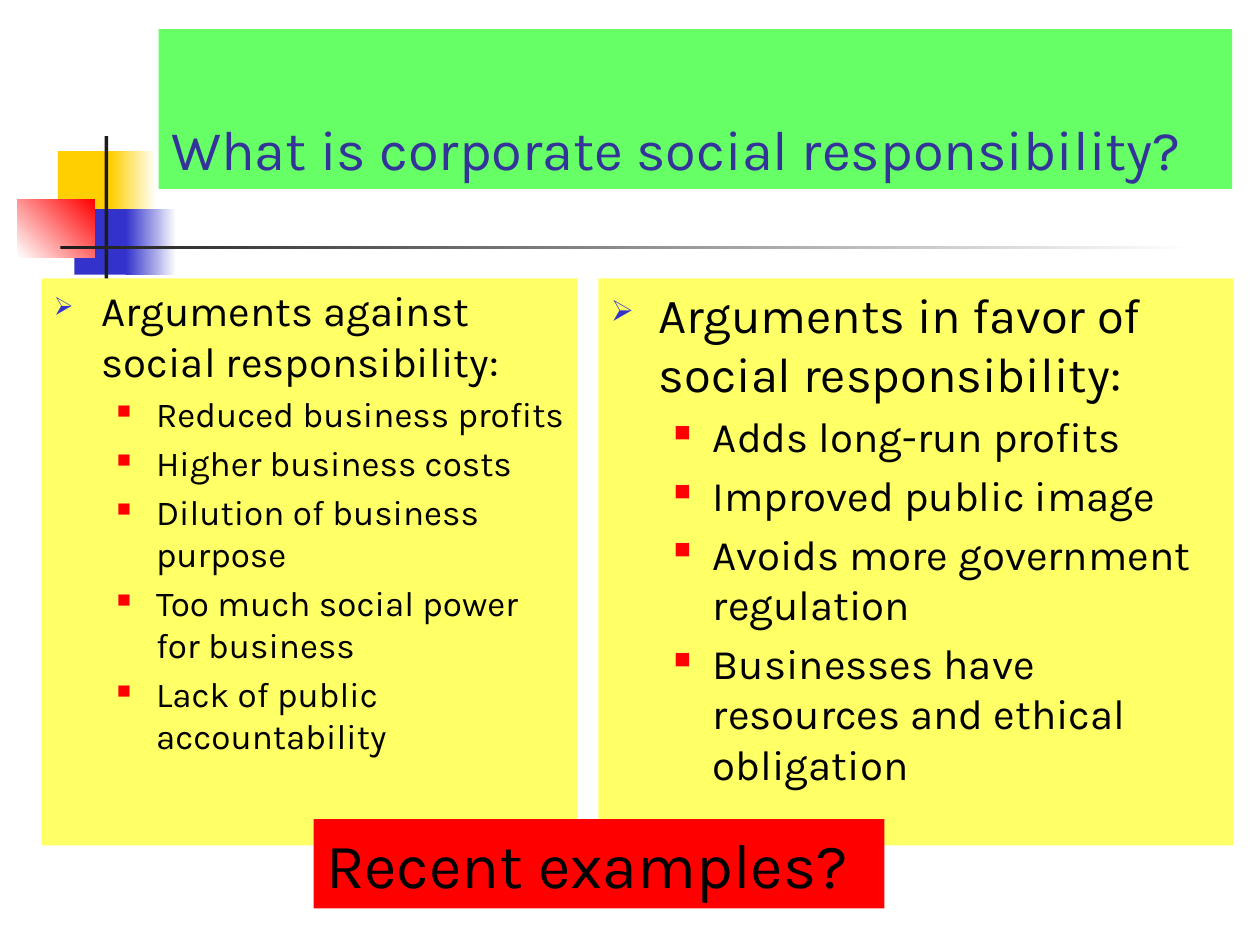
from lxml.etree import SubElement as Sub
from pptx import Presentation
from pptx.dml.color import RGBColor as Rgb
from pptx.enum.shapes import MSO_SHAPE as Shape
from pptx.enum.text import MSO_ANCHOR as Anchor, MSO_AUTO_SIZE as Fit, PP_ALIGN as Align
from pptx.oxml.ns import qn
from pptx.util import Inches, Pt

PAGE = (0, 0, 10, 7.5)
FONT = "Karla"
RED, BLUE, GOLD = "FF0000", "3333CC", "FFCF01"
WHITE, DARK, BLACK = "FFFFFF", "1C1C1C", "000000"
GREEN, LEMON, NAVY = "66FF66", "FFFF66", "333399"
MARKS = [("➢", BLUE, 60, 0.38, 0.38), ("■", RED, 55, 0.81, 0.31)]
AGAINST = ["Arguments against social responsibility:",
           "Reduced business profits",
           "Higher business costs",
           "Dilution of business purpose",
           "Too much social power for business",
           "Lack of public accountability"]
FAVOR = ["Arguments in favor of social responsibility:",
         "Adds long-run profits",
         "Improved public image",
         "Avoids more government regulation",
         "Businesses have resources and ethical obligation"]


def color(code):
    """Turn a hex string into a colour."""
    return Rgb.from_string(code)


def part(box, x, y, w, h):
    """Return the part of a box given by percentages of its size."""
    left, top, wide, high = box
    return (left + wide * x / 100, top + high * y / 100,
            wide * w / 100, high * h / 100)


def block(slide, box, first, last=None, angle=0):
    """Draw a plain or two-colour rectangle."""
    rect = slide.shapes.add_shape(Shape.RECTANGLE, *map(Inches, box))
    rect.shadow.inherit = False
    rect.line.fill.background()
    if last:
        rect.fill.gradient()
        rect.fill.gradient_angle = angle
        for stop, code in zip(rect.fill.gradient_stops, (first, last)):
            stop.color.rgb = color(code)
    else:
        rect.fill.solid()
        rect.fill.fore_color.rgb = color(first)
    return rect


def bullet(para, level):
    """Give a paragraph the mark and indent of its level."""
    char, code, size, left, hang = MARKS[level]
    para.level = level
    props = para._p.get_or_add_pPr()
    props.set("marL", str(Inches(left)))
    props.set("indent", str(-Inches(hang)))
    Sub(Sub(props, qn("a:buClr")), qn("a:srgbClr"), val=code)
    Sub(props, qn("a:buSzPct"), val=str(size * 1000))
    Sub(props, qn("a:buChar"), char=char)


def write(para, text, size=24, code=BLACK, space=None, before=0):
    """Fill a paragraph with formatted text."""
    para.alignment = Align.LEFT
    para.line_spacing = space
    para.space_before = Pt(before)
    run = para.add_run()
    run.text = text
    run.font.name = FONT
    run.font.size = Pt(size)
    run.font.color.rgb = color(code)


def art(slide, box):
    """Draw the squares and crossed bars beside the title."""
    for x, y, w, h, *look in [
        (4.6, 16, 4.8, 41.6, GOLD),
        (8.8, 16, 3.6, 41.6, GOLD, WHITE),
        (5.9, 52.8, 4.6, 41.6, BLUE),
        (10, 52.8, 4, 41.6, BLUE, WHITE),
        (1.4, 46.4, 6.1, 36.8, WHITE, RED, 45),
        (8.3, 6.4, 0.3, 92, DARK),
        (4.8, 76, 90, 2.4, DARK, WHITE),
    ]:
        block(slide, part(box, x, y, w, h), *look)


def title(slide, box):
    """Place the heading at the foot of its band."""
    frame = block(slide, box, GREEN).text_frame
    frame.word_wrap = True
    frame.vertical_anchor = Anchor.BOTTOM
    write(frame.paragraphs[0], "What is corporate social responsibility?",
          size=32, code=NAVY, space=0.9)


def panel(slide, box, lines, size):
    """List a heading and its points, the points one step smaller."""
    frame = block(slide, box, LEMON).text_frame
    frame.word_wrap = True
    frame.vertical_anchor = Anchor.TOP
    for num, line in enumerate(lines):
        para = frame.add_paragraph() if num else frame.paragraphs[0]
        high = size - 4 if num else size
        write(para, line, size=high, before=high * 0.2)
        bullet(para, min(num, 1))


def label(slide, box):
    """Place the closing question."""
    frame = block(slide, box, RED).text_frame
    frame.word_wrap = False
    frame.auto_size = Fit.SHAPE_TO_FIT_TEXT
    frame.vertical_anchor = Anchor.TOP
    write(frame.paragraphs[0], "Recent examples?", size=36)


def main():
    """Build and save the slide."""
    deck = Presentation()
    deck.slide_width, deck.slide_height = map(Inches, PAGE[2:])
    slide = deck.slides.add_slide(deck.slide_layouts[6])
    art(slide, part(PAGE, 0, 13.33, 100, 16.67))
    title(slide, part(PAGE, 12.6, 3.07, 85.2, 16.93))
    panel(slide, part(PAGE, 3.3, 29.47, 42.5, 60), AGAINST, 24)
    panel(slide, part(PAGE, 47.5, 29.47, 50.4, 60), FAVOR, 28)
    label(slide, part(PAGE, 24.9, 86.67, 45.3, 9.47))
    deck.save("out.pptx")


if __name__ == "__main__":
    main()
